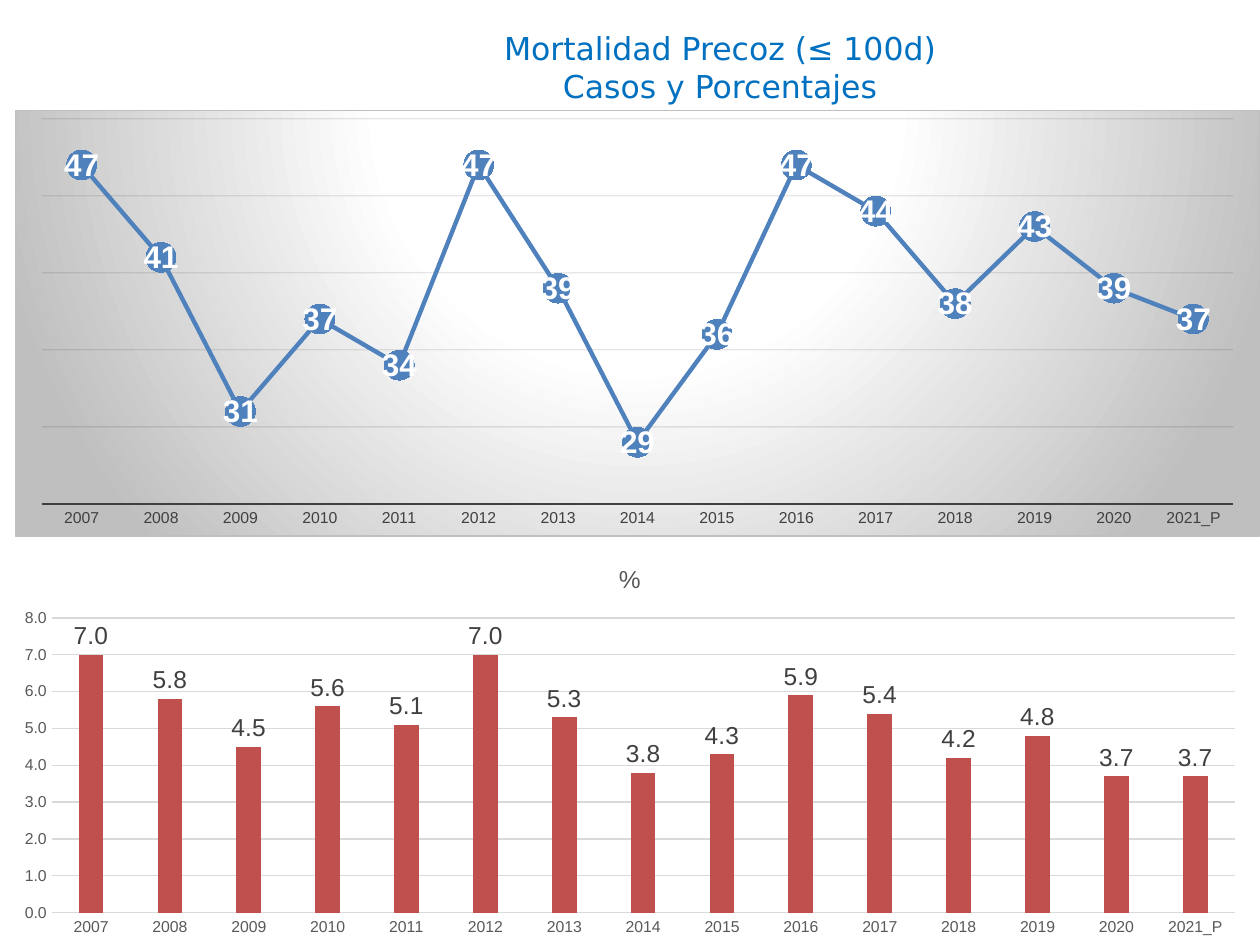
import dataclasses
import typing

import pptx
import pptx.chart.data
import pptx.dml.color
import pptx.enum.chart
import pptx.enum.text
import pptx.oxml
import pptx.oxml.ns
import pptx.util

Pt = pptx.util.Pt
ChartType = pptx.enum.chart.XL_CHART_TYPE
LabelPosition = pptx.enum.chart.XL_LABEL_POSITION
NO_TICKS = pptx.enum.chart.XL_TICK_MARK.NONE
qn = pptx.oxml.ns.qn
NAMESPACES = pptx.oxml.ns.nsdecls("c", "a")


@dataclasses.dataclass(frozen=True)
class Theme:
    title: str = "0070C0"
    cases: str = "4F81BD"
    percent: str = "C0504D"
    white: str = "FFFFFF"
    silver: str = "BFBFBF"
    pale: str = "D9D9D9"
    gray: str = "595959"
    dark: str = "404040"
    faint: str = "0D0D0D"
    title_font: str = "DejaVu Sans"
    chart_font: str = "Arial"
    large: float = 18
    medium: float = 14
    small: float = 9


class Box(typing.NamedTuple):
    x: float
    y: float
    width: float
    height: float

    def lengths(self) -> list:
        return [Pt(value) for value in self]


@dataclasses.dataclass(frozen=True)
class ChartPanel:
    kind: typing.Any
    name: str
    values: tuple
    box: Box
    plot_area: Box  # fractions of the chart
    axis_color: str
    axis_line: str
    axis_width: float
    grid_color: str
    value_axis: dict
    label_format: str
    label_position: typing.Any
    label_size: float
    label_color: str
    label_bold: bool


THEME = Theme()
YEARS = [str(year) for year in range(2007, 2021)] + ["2021_P"]

CASES = ChartPanel(
    ChartType.LINE_MARKERS, "Casos",
    (47, 41, 31, 37, 34, 47, 39, 29, 36, 47, 44, 38, 43, 39, 37),
    Box(8.64, 62.64, 711.36, 244), Box(0.021, 0.02, 0.958, 0.905),
    THEME.dark, THEME.dark, 1.5, THEME.faint,
    {"minimum_scale": 25, "maximum_scale": 50, "major_unit": 5, "visible": False},
    "General", LabelPosition.CENTER, THEME.large, THEME.white, True)

PERCENT = ChartPanel(
    ChartType.COLUMN_CLUSTERED, "%",
    (7.0, 5.8, 4.5, 5.6, 5.1, 7.0, 5.3, 3.8, 4.3, 5.9, 5.4, 4.2, 4.8, 3.7, 3.7),
    Box(0, 311, 720, 229), Box(0.041, 0.184, 0.939, 0.736),
    THEME.gray, THEME.pale, 0.75, THEME.pale,
    {"minimum_scale": 0, "maximum_scale": 8, "major_unit": 1},
    "0.0", LabelPosition.OUTSIDE_END, THEME.medium, THEME.dark, False)


def apply(target: typing.Any, values: dict) -> None:
    for name, value in values.items():
        setattr(target, name, value)


def rgb(color: str) -> pptx.dml.color.RGBColor:
    return pptx.dml.color.RGBColor.from_string(color)


def style_font(font: typing.Any, name: str, size: float, color: str, bold: bool = False) -> None:
    apply(font, {"name": name, "size": Pt(size), "bold": bold})
    font.color.rgb = rgb(color)


def style_line(line: typing.Any, color: str, width: float) -> None:
    line.color.rgb = rgb(color)
    line.width = Pt(width)


def place_plot_area(chart: typing.Any, area: Box) -> None:
    plot_area = chart.element.find(".//" + qn("c:plotArea"))
    for layout in plot_area.findall(qn("c:layout")):
        plot_area.remove(layout)
    edges = "".join(f'<c:{tag} val="{value}"/>' for tag, value in zip("xywh", area))
    plot_area.insert(0, pptx.oxml.parse_xml(
        f'<c:layout {NAMESPACES}><c:manualLayout><c:layoutTarget val="inner"/>'
        f'<c:xMode val="edge"/><c:yMode val="edge"/>{edges}</c:manualLayout></c:layout>'))


def add_panel(slide: typing.Any, panel: ChartPanel) -> typing.Any:
    data = pptx.chart.data.CategoryChartData(number_format=panel.label_format)
    data.categories = YEARS
    data.add_series(panel.name, panel.values)
    chart = slide.shapes.add_chart(panel.kind, *panel.box.lengths(), data).chart
    apply(chart, {"has_legend": False, "has_title": False})
    chart.font.name = THEME.chart_font
    chart.font.size = Pt(10)
    place_plot_area(chart, panel.plot_area)

    # Axes and gridlines
    for axis in (chart.category_axis, chart.value_axis):
        apply(axis, {"major_tick_mark": NO_TICKS, "minor_tick_mark": NO_TICKS})
        style_font(axis.tick_labels.font, THEME.chart_font, THEME.small, panel.axis_color)
    style_line(chart.category_axis.format.line, panel.axis_line, panel.axis_width)
    apply(chart.value_axis, panel.value_axis)
    chart.value_axis.format.line.fill.background()
    apply(chart.value_axis.tick_labels,
          {"number_format": panel.label_format, "number_format_is_linked": False})
    style_line(chart.value_axis.major_gridlines.format.line, panel.grid_color, 0.75)

    # Data labels
    plot = chart.plots[0]
    apply(plot, {"vary_by_categories": False, "has_data_labels": True})
    apply(plot.data_labels, {
        "show_value": True, "position": panel.label_position,
        "number_format": panel.label_format, "number_format_is_linked": False})
    style_font(plot.data_labels.font, THEME.chart_font, panel.label_size,
               panel.label_color, panel.label_bold)
    return chart


def add_cases(slide: typing.Any) -> None:
    chart = add_panel(slide, CASES)
    series = chart.plots[0].series[0]
    series.smooth = False
    style_line(series.format.line, THEME.cases, 2.5)
    apply(series.marker, {"style": pptx.enum.chart.XL_MARKER_STYLE.CIRCLE, "size": 17})
    series.marker.format.fill.solid()
    series.marker.format.fill.fore_color.rgb = rgb(THEME.cases)
    series.marker.format.line.fill.background()

    # Nearly transparent gridlines
    gridlines = chart.element.find(".//" + qn("c:majorGridlines"))
    gridlines.find(".//" + qn("a:srgbClr")).append(
        pptx.oxml.parse_xml(f'<a:alpha {NAMESPACES} val="10000"/>'))

    # Radial gradient behind the chart
    stops = "".join(
        f'<a:gs pos="{position}"><a:srgbClr val="{color}"/></a:gs>'
        for position, color in ((0, THEME.white), (39000, THEME.white), (100000, THEME.silver)))
    chart.element.find(qn("c:chart")).addnext(pptx.oxml.parse_xml(
        f'<c:spPr {NAMESPACES}><a:gradFill><a:gsLst>{stops}</a:gsLst><a:path path="circle">'
        '<a:fillToRect l="50000" t="-80000" r="50000" b="180000"/></a:path></a:gradFill>'
        f'<a:ln w="{Pt(0.75)}"><a:solidFill><a:srgbClr val="{THEME.silver}"/>'
        '</a:solidFill></a:ln></c:spPr>'))


def add_percent(slide: typing.Any) -> None:
    chart = add_panel(slide, PERCENT)
    apply(chart.plots[0], {"gap_width": 219, "overlap": -27})
    bars = chart.plots[0].series[0].format.fill
    bars.solid()
    bars.fore_color.rgb = rgb(THEME.percent)
    heading = chart.chart_title.text_frame
    heading.text = PERCENT.name
    style_font(heading.paragraphs[0].runs[0].font, THEME.chart_font, THEME.medium, THEME.gray)


def add_title(slide: typing.Any) -> None:
    title = slide.shapes.title
    apply(title, dict(zip(("left", "top", "width", "height"),
                          Box(156.24, 12.96, 510.48, 28.8).lengths())))
    frame = title.text_frame
    frame.text = "Mortalidad Precoz (≤ 100d)\nCasos y Porcentajes"
    apply(frame, {"word_wrap": True, "vertical_anchor": pptx.enum.text.MSO_ANCHOR.TOP,
                  "auto_size": pptx.enum.text.MSO_AUTO_SIZE.NONE})
    for line in frame.paragraphs:
        apply(line, {"alignment": pptx.enum.text.PP_ALIGN.CENTER, "space_before": Pt(0)})
        style_font(line.runs[0].font, THEME.title_font, THEME.large, THEME.title)


def main() -> None:
    deck = pptx.Presentation()
    apply(deck, {"slide_width": Pt(720), "slide_height": Pt(540)})
    slide = deck.slides.add_slide(deck.slide_layouts[5])
    add_title(slide)
    add_cases(slide)
    add_percent(slide)
    deck.save("out.pptx")


if __name__ == "__main__":
    main()
